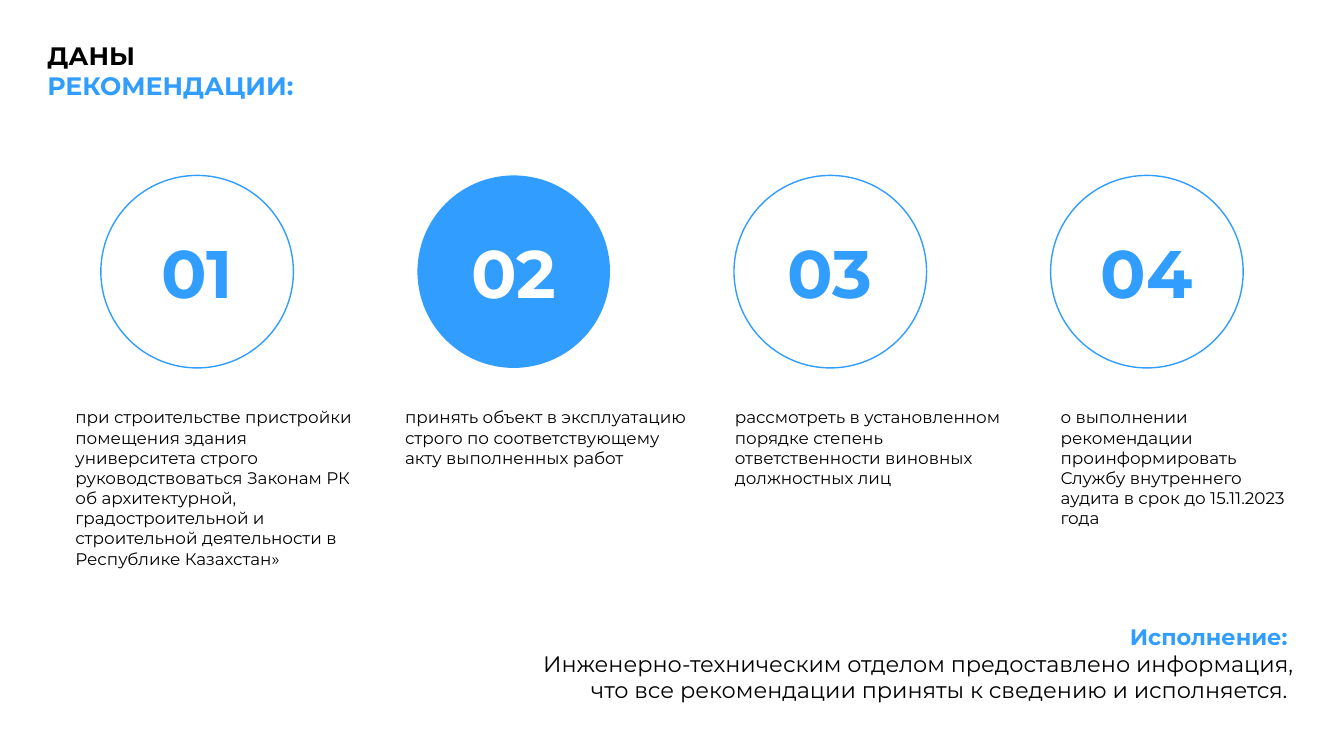
from dataclasses import dataclass

from pptx import Presentation
from pptx import util as u
from pptx.dml.color import RGBColor
from pptx.enum import shapes, text


@dataclass(frozen=True)
class Theme:
    font: str = "Montserrat"
    accent: str = "309DFF"
    ink: str = "000000"
    paper: str = "FFFFFF"
    title: int = 18
    body: int = 12
    number: int = 48
    closing: int = 16


class Deck:
    def __init__(self, prs, theme):
        self.theme = theme
        self.s = prs.slides.add_slide(prs.slide_layouts[5])
        fill = self.s.background.fill
        fill.solid()
        fill.fore_color.rgb = RGBColor.from_string(theme.paper)

    def set_text(self, sp, lines, size, align=text.PP_ALIGN.LEFT):
        tf = sp.text_frame
        frame_format = {
            "word_wrap": True,
            "auto_size": text.MSO_AUTO_SIZE.SHAPE_TO_FIT_TEXT,
            "vertical_anchor": text.MSO_ANCHOR.TOP,
        }
        for name, value in frame_format.items():
            setattr(tf, name, value)
        for i, (words, color, bold) in enumerate(lines):
            p = tf.paragraphs[0] if i == 0 else tf.add_paragraph()
            p.alignment = align
            r = p.add_run()
            r.text = words
            font_format = {"name": self.theme.font, "size": u.Pt(size), "bold": bold}
            for name, value in font_format.items():
                setattr(r.font, name, value)
            r.font.color.rgb = RGBColor.from_string(color)

    def title(self, box, lines):
        sp = self.s.shapes.title
        for name, value in zip(("left", "top", "width", "height"), box):
            setattr(sp, name, u.Inches(value))
        self.set_text(sp, lines, self.theme.title)

    def textbox(self, box, lines, size, align=text.PP_ALIGN.LEFT):
        sp = self.s.shapes.add_textbox(*map(u.Inches, box))
        self.set_text(sp, lines, size, align)

    def circle(self, left, top, size, filled):
        box = map(u.Inches, (left, top, size, size))
        sp = self.s.shapes.add_shape(shapes.MSO_SHAPE.OVAL, *box)
        sp.shadow.inherit = False
        accent = RGBColor.from_string(self.theme.accent)
        if filled:
            sp.fill.solid()
            sp.fill.fore_color.rgb = accent
            sp.line.fill.background()
        else:
            sp.fill.background()
            sp.line.color.rgb = accent
            sp.line.width = u.Pt(1)


RECOMMENDATIONS = [
    (0.65, 3.06, 1.72, "при строительстве пристройки помещения здания университета строго "
     "руководствоваться Законам РК об архитектурной, градостроительной и "
     "строительной деятельности в Республике Казахстан»"),
    (3.92, 3.06, 0.71, "принять объект в эксплуатацию строго по соответствующему "
     "акту выполненных работ"),
    (7.19, 2.91, 0.91, "рассмотреть в установленном порядке степень ответственности "
     "виновных должностных лиц"),
    (10.42, 2.51, 1.31, "о выполнении рекомендации проинформировать Службу внутреннего "
     "аудита в срок до 15.11.2023 года"),
]
HIGHLIGHTED = 2


def main():
    prs = Presentation()
    prs.slide_width, prs.slide_height = u.Inches(13.33), u.Inches(7.5)
    theme = Theme()
    deck = Deck(prs, theme)

    deck.title((0.37, 0.35, 4.77, 0.71), [
        ("ДАНЫ", theme.ink, True),
        ("РЕКОМЕНДАЦИИ:", theme.accent, True),
    ])

    first, pitch, diameter, number_width = 1, 3.14, 1.91, 1.2
    for i, (left, width, height, words) in enumerate(RECOMMENDATIONS):
        circle_left = first + i * pitch
        filled = i + 1 == HIGHLIGHTED
        deck.circle(circle_left, 1.74, diameter, filled)
        number_left = circle_left + (diameter - number_width) / 2
        color = theme.paper if filled else theme.accent
        deck.textbox((number_left, 2.25, number_width, 0.91),
                     [(f"{i + 1:02}", color, True)], theme.number, text.PP_ALIGN.CENTER)
        deck.textbox((left, 3.99, width, height), [(words, theme.ink, False)], theme.body)

    deck.textbox((5.14, 6.13, 7.79, 0.91), [
        ("Исполнение: ", theme.accent, True),
        ("Инженерно-техническим отделом предоставлено информация, "
         "что все рекомендации приняты к сведению и исполняется. ", theme.ink, False),
    ], theme.closing, text.PP_ALIGN.RIGHT)

    prs.save("out.pptx")


if __name__ == "__main__":
    main()
